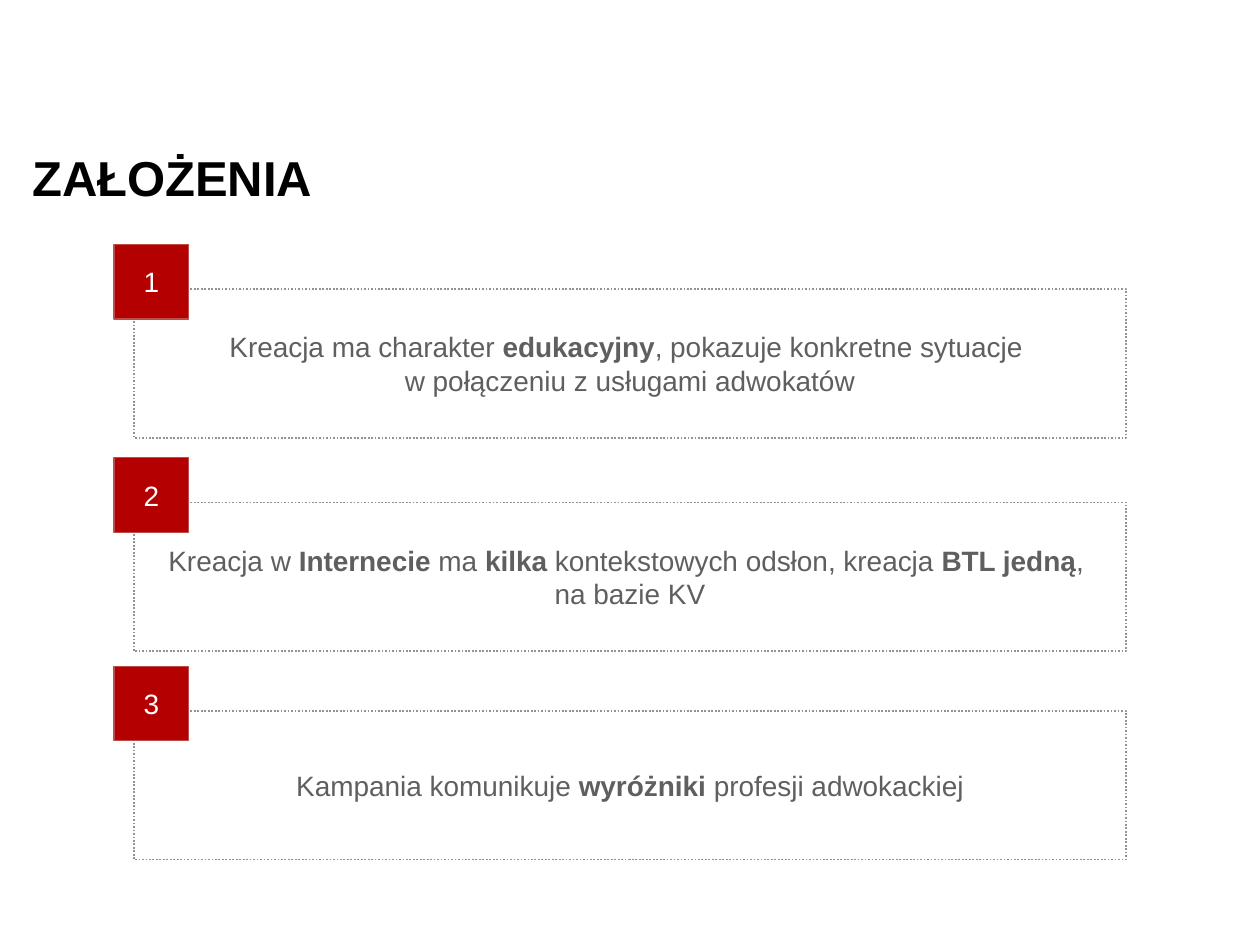
from pptx import Presentation
from pptx.dml.color import RGBColor
from pptx.enum.dml import MSO_LINE
from pptx.enum.shapes import MSO_SHAPE
from pptx.enum.text import MSO_ANCHOR, PP_ALIGN
from pptx.util import Cm, Pt

BLACK = RGBColor(0x00, 0x00, 0x00)
WHITE = RGBColor(0xFF, 0xFF, 0xFF)
GREY_TEXT = RGBColor(0x5F, 0x5F, 0x5F)
GREY_LINE = RGBColor(0x92, 0x92, 0x92)
RED = RGBColor(0xB4, 0x00, 0x00)
RED_LINE = RGBColor(0xBF, 0x4C, 0x48)

RECTANGLE = MSO_SHAPE.RECTANGLE
DOTTED = MSO_LINE.ROUND_DOT  # stored in the file as sysDot
MIDDLE = MSO_ANCHOR.MIDDLE
LEFT, CENTER = PP_ALIGN.LEFT, PP_ALIGN.CENTER

BADGE_LEFT, BADGE_SIZE = 2.3, 1.5
FRAME_LEFT, FRAME_WIDTH, FRAME_HEIGHT = 2.7, 20, 3
FRAME_DROP = 0.9  # from the top of a badge to the top of its frame

# Badge top in cm and paragraphs; asterisks enclose bold words.
ASSUMPTIONS = [
    (4.93, ["Kreacja ma charakter* edukacyjny*, pokazuje konkretne sytuacje \n"
            "w połączeniu z usługami adwokatów"]),
    (9.23, ["Kreacja w *Internecie* ma *kilka *kontekstowych odsłon, kreacja *BTL jedną*, ",
            "na bazie KV"]),
    (13.43, ["Kampania komunikuje *wyróżniki* profesji adwokackiej"]),
]


class SlideBuilder:
    font_name = "Arial"
    body_size = 16
    title_size = 28

    def __init__(self, page):
        self.page = page

    def add_text(self, shape, paragraphs, color, size, align=CENTER):
        """Fill a shape with paragraphs, turning asterisks into bold runs."""
        frame = shape.text_frame
        frame.word_wrap = True
        frame.vertical_anchor = MIDDLE
        for index, text in enumerate(paragraphs):
            para = frame.add_paragraph() if index else frame.paragraphs[0]
            para.alignment = align
            para.font.name = self.font_name
            para.font.size = Pt(size)
            para.font.color.rgb = color
            for part_index, part in enumerate(text.split("*")):
                for line_index, line in enumerate(part.split("\n")):
                    if line_index:
                        para.add_line_break()
                    span = para.add_run()
                    span.text = line
                    if part_index % 2:
                        span.font.bold = True

    def title(self, text, left, top, width, height):
        box = self.page.shapes.add_textbox(Cm(left), Cm(top), Cm(width), Cm(height))
        self.add_text(box, [text], BLACK, self.title_size, LEFT)
        box.text_frame.paragraphs[0].font.bold = True

    def rectangle(self, left, top, width, height, line_color, line_width):
        box = self.page.shapes.add_shape(
            RECTANGLE, Cm(left), Cm(top), Cm(width), Cm(height))
        box.shadow.inherit = False
        box.line.color.rgb = line_color
        box.line.width = Pt(line_width)
        return box

    def frame(self, top, paragraphs):
        box = self.rectangle(FRAME_LEFT, top, FRAME_WIDTH, FRAME_HEIGHT, GREY_LINE, 1)
        box.fill.background()
        box.line.dash_style = DOTTED
        text = box.text_frame
        text.margin_left = text.margin_right = text.margin_top = text.margin_bottom = 0
        self.add_text(box, paragraphs, GREY_TEXT, self.body_size)

    def badge(self, top, number):
        box = self.rectangle(BADGE_LEFT, top, BADGE_SIZE, BADGE_SIZE, RED_LINE, 0.75)
        box.fill.solid()
        box.fill.fore_color.rgb = RED
        self.add_text(box, [str(number)], WHITE, self.body_size)


def main():
    deck = Presentation()
    deck.slide_width, deck.slide_height = Cm(25.4), Cm(19.05)
    builder = SlideBuilder(deck.slides.add_slide(deck.slide_layouts[6]))
    builder.title("ZAŁOŻENIA", 0.4, 2.57, 22.86, 2)
    for number, (top, paragraphs) in enumerate(ASSUMPTIONS, start=1):
        builder.frame(top + FRAME_DROP, paragraphs)
        builder.badge(top, number)
    deck.save("out.pptx")


if __name__ == "__main__":
    main()
